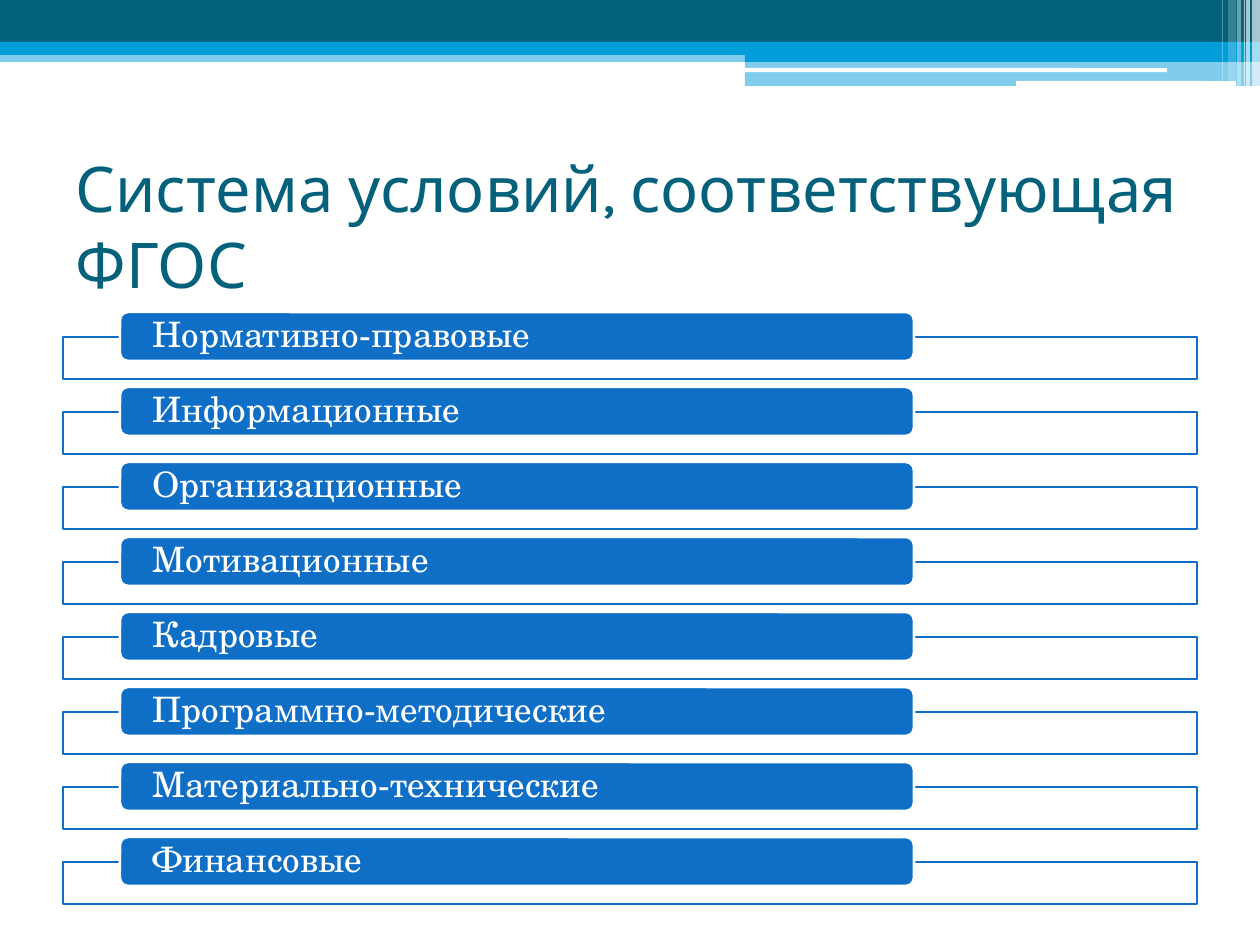
from pptx import Presentation
from pptx.dml.color import RGBColor
from pptx.enum.shapes import MSO_SHAPE as Shape
from pptx.enum.text import MSO_ANCHOR as Anchor, PP_ALIGN as Align
from pptx.oxml.ns import qn
from pptx.util import Emu, Pt
from lxml.etree import SubElement

TEAL = RGBColor(0x04, 0x61, 0x7B)
CYAN = RGBColor(0x00, 0x9D, 0xD9)
BLUE = RGBColor(0x0F, 0x6F, 0xC6)
WHITE = RGBColor(0xFF, 0xFF, 0xFF)
HEAD, BODY = "Karla", "TeX Gyre Schola"
SCALE = 914400 / 126  # EMU in one px


def px(n):
    return Emu(round(n * SCALE))


class Deck:
    """Style and current slide."""

    def __init__(self, wide, high):
        self.prs = Presentation()
        self.prs.slide_width, self.prs.slide_height = px(wide), px(high)
        self.slide = self.prs.slides.add_slide(self.prs.slide_layouts[5])

    def label(self, frame, text, font, size, color):
        frame.text = text
        frame.word_wrap = True
        frame.vertical_anchor = Anchor.MIDDLE
        para = frame.paragraphs[0]
        para.alignment = Align.LEFT
        face = para.runs[0].font
        face.name, face.size, face.color.rgb = font, Pt(size), color
        return para

    def title(self, text, x, y, w, h):
        box = self.slide.shapes.title
        box.left, box.top, box.width, box.height = map(px, (x, y, w, h))
        self.label(box.text_frame, text, HEAD, 36, TEAL)

    def block(self, x, y, w, h, fill, alpha=100, line=None, kind=Shape.RECTANGLE):
        box = self.slide.shapes.add_shape(kind, *map(px, (x, y, w, h)))
        box.shadow.inherit = False
        box.fill.solid()
        box.fill.fore_color.rgb = fill
        if alpha < 100:
            tint = box.fill._xPr.find(qn("a:solidFill"))[0]
            SubElement(tint, qn("a:alpha"), val=str(alpha * 1000))
        if line is None:
            box.line.fill.background()
        else:
            box.line.color.rgb = line
            box.line.width = Pt(1.5)
        return box

    def tab(self, text, x, y, w, h):
        box = self.block(x, y, w, h, BLUE, line=WHITE, kind=Shape.ROUNDED_RECTANGLE)
        frame = box.text_frame
        frame.margin_left = frame.margin_right = px(30)
        frame.margin_top = frame.margin_bottom = 0
        para = self.label(frame, text, BODY, 20, WHITE)
        para.line_spacing = 0.9


def main():
    deck = Deck(1260, 945)

    # Header bands
    for x, y, w, h, fill, alpha in (
        (0, 50, 1260, 12, CYAN, 50),
        (0, 0, 1260, 43, TEAL, 100),
        (0, 42, 1260, 13, CYAN, 100),
        (745, 49, 515, 13, CYAN, 100),
        (745, 61, 515, 25, CYAN, 50),
    ):
        deck.block(x, y, w, h, fill, alpha)

    # White strips under the header
    for x, y, w, h in ((745, 68, 422, 4), (1016, 81, 220, 5)):
        deck.block(x, y, w, h, WHITE, kind=Shape.ROUNDED_RECTANGLE)

    # Light stripes at the right edge
    for x, w, h, alpha in (
        (1252, 8, 86, 65),
        (1246, 4, 86, 65),
        (1244, 1, 86, 60),
        (1237, 4, 86, 40),
        (1228, 8, 81, 20),
        (1222, 1, 81, 30),
    ):
        deck.block(x, 0, w, h, WHITE, alpha)

    deck.title("Система условий, соответствующая ФГОС", 63, 157, 1134, 136)

    # List of conditions: a frame and a tab in each row
    names = (
        "Нормативно-правовые",
        "Информационные",
        "Организационные",
        "Мотивационные",
        "Кадровые",
        "Программно-методические",
        "Материально-технические",
        "Финансовые",
    )
    for row, name in enumerate(names):
        y = 312 + 75 * row
        deck.block(63, y + 25, 1134, 42, WHITE, 90, BLUE)
        deck.tab(name, 120, y, 794, 49)

    deck.prs.save("out.pptx")


if __name__ == "__main__":
    main()
